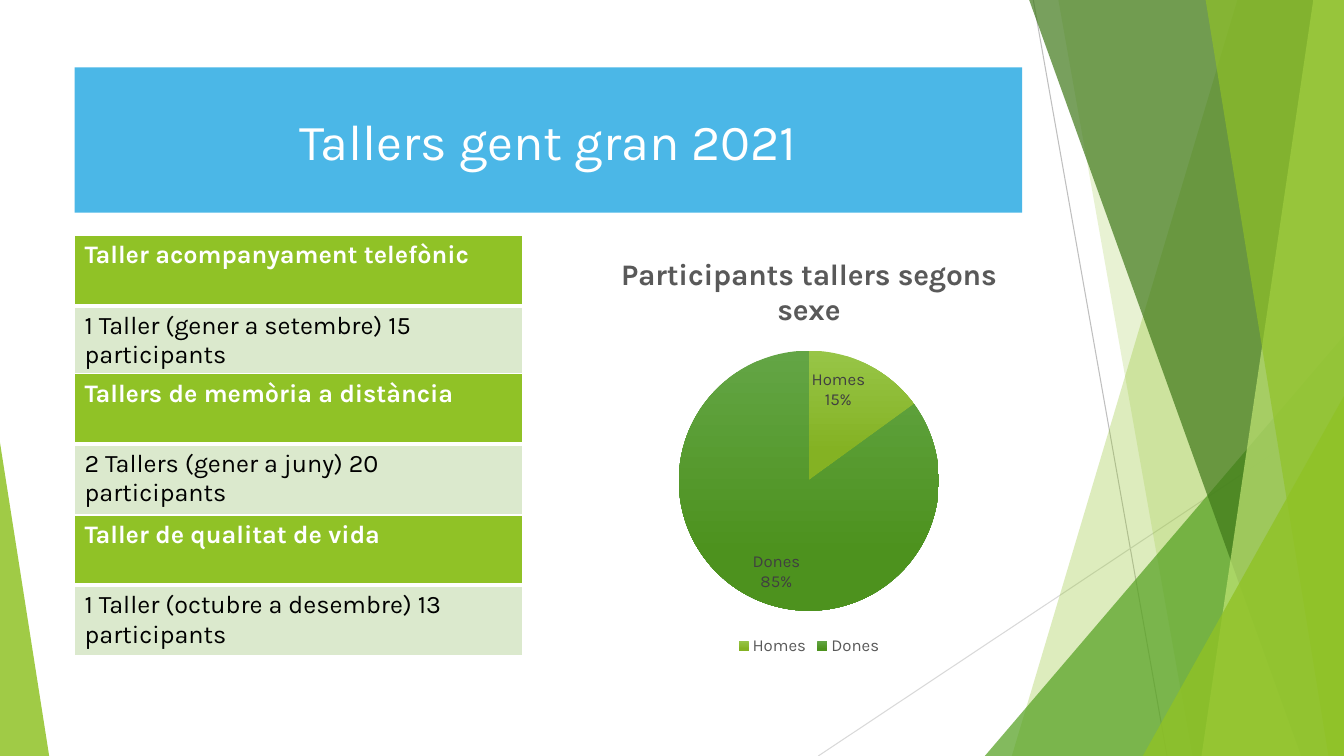
from dataclasses import dataclass

from lxml import etree
from pptx import Presentation
from pptx import util as u
from pptx.chart import data
from pptx.dml.color import RGBColor
from pptx.enum import chart as charts
from pptx.enum import shapes, text
from pptx.oxml.ns import qn

WHITE = RGBColor(0xFF, 0xFF, 0xFF)
BLACK = RGBColor(0x00, 0x00, 0x00)
SKY = RGBColor(0x4B, 0xB7, 0xE7)
LIME = RGBColor(0x90, 0xC2, 0x26)
PALE_LIME = RGBColor(0xC0, 0xE4, 0x74)
LEAF = RGBColor(0x54, 0xA0, 0x21)
FOREST = RGBColor(0x3F, 0x78, 0x19)
MIST = RGBColor(0xDB, 0xE9, 0xCD)
SILVER = RGBColor(0xBF, 0xBF, 0xBF)
LIGHT_SILVER = RGBColor(0xD9, 0xD9, 0xD9)
GREY = RGBColor(0x59, 0x59, 0x59)
DARK_GREY = RGBColor(0x40, 0x40, 0x40)
HOMES = (RGBColor(0x97, 0xC5, 0x47), RGBColor(0x84, 0xB2, 0x23))
DONES = (RGBColor(0x63, 0xA5, 0x45), RGBColor(0x4D, 0x92, 0x1E))
FONT = "Karla"
WIDTH, HEIGHT = 33.87, 19.05
LEFT = 1.88


@dataclass
class Ray:
    start: tuple[float, float]
    end: tuple[float, float]
    color: RGBColor


@dataclass
class Band:
    top_x: float
    bottom_x: float
    color: RGBColor
    opacity: int


@dataclass
class Wedge:
    left: float
    top: float
    width: float
    apex: float
    color: RGBColor
    opacity: int


@dataclass
class Workshop:
    top: float
    name: str
    summary: str


RAYS = [
    Ray((26.04, 0), (29.41, HEIGHT), SILVER),
    Ray((WIDTH, 10.24), (20.62, HEIGHT), LIGHT_SILVER),
]
FACETS = [
    Band(31.19, 25.5, LIME, 30),
    Band(26.67, 30.05, LIME, 20),
    Wedge(24.82, 8.46, 9.05, 1, LEAF, 72),
    Band(25.93, 32.79, FOREST, 70),
    Band(33.1, 30.28, PALE_LIME, 70),
    Band(30.38, 33.48, LIME, 65),
    Wedge(28.8, 9.98, 5.07, 1, LIME, 80),
    Wedge(0, 11.15, 1.24, 0, LIME, 85),
]
WORKSHOPS = [
    Workshop(5.94, "Taller acompanyament telefònic",
             "1 Taller (gener a setembre) 15 participants"),
    Workshop(9.42, "Tallers de memòria a distància",
             "2 Tallers (gener a juny) 20 participants"),
    Workshop(12.98, "Taller de qualitat de vida",
             "1 Taller (octubre a desembre) 13 participants"),
]


def style_font(font, size: float, color: RGBColor, bold: bool = False) -> None:
    font.name = FONT
    font.size = u.Pt(size)
    font.bold = bold
    font.color.rgb = color


def paint(shape, color: RGBColor, opacity: int = 100) -> None:
    shape.shadow.inherit = False
    shape.fill.solid()
    shape.fill.fore_color.rgb = color
    shape.line.fill.background()
    if opacity < 100:
        tint = next(shape.element.spPr.iter(qn("a:srgbClr")))
        etree.SubElement(tint, qn("a:alpha"), val=str(opacity * 1000))


def draw_ray(slide, ray: Ray) -> None:
    line = slide.shapes.add_connector(
        shapes.MSO_CONNECTOR.STRAIGHT, *map(u.Cm, ray.start + ray.end))
    line.line.color.rgb = ray.color
    line.line.width = u.Pt(0.75)
    etree.SubElement(line.element.spPr, qn("a:effectLst"))


def draw_band(slide, band: Band) -> None:
    builder = slide.shapes.build_freeform(
        u.Cm(band.top_x), u.Cm(-0.02))
    corners = [(WIDTH, -0.02), (WIDTH, HEIGHT), (band.bottom_x, HEIGHT)]
    builder.add_line_segments([(u.Cm(x), u.Cm(y)) for x, y in corners])
    paint(builder.convert_to_shape(), band.color, band.opacity)


def draw_wedge(slide, wedge: Wedge) -> None:
    triangle = slide.shapes.add_shape(
        shapes.MSO_SHAPE.ISOSCELES_TRIANGLE, u.Cm(wedge.left),
        u.Cm(wedge.top), u.Cm(wedge.width), u.Cm(HEIGHT - wedge.top))
    triangle.adjustments[0] = wedge.apex
    paint(triangle, wedge.color, wedge.opacity)


def draw_title(slide, words: str) -> None:
    banner = slide.shapes.add_shape(
        shapes.MSO_SHAPE.RECTANGLE, u.Cm(LEFT), u.Cm(1.7),
        u.Cm(23.88), u.Cm(3.66))
    paint(banner, SKY)
    frame = banner.text_frame
    frame.text = words
    frame.vertical_anchor = text.MSO_ANCHOR.MIDDLE
    paragraph = frame.paragraphs[0]
    paragraph.alignment = text.PP_ALIGN.CENTER
    style_font(paragraph.runs[0].font, 36, WHITE)


def add_borders(cell, bottom: float) -> None:
    properties = cell._tc.get_or_add_tcPr()
    widths = {"a:lnL": 1, "a:lnR": 1, "a:lnT": 1, "a:lnB": bottom}
    for index, (side, width) in enumerate(widths.items()):
        border = etree.Element(qn(side), w=str(u.Pt(width)))
        fill = etree.SubElement(border, qn("a:solidFill"))
        etree.SubElement(fill, qn("a:srgbClr"), val=str(WHITE))
        properties.insert(index, border)


def draw_workshop(slide, workshop: Workshop) -> None:
    table = slide.shapes.add_table(
        2, 1, u.Cm(LEFT), u.Cm(workshop.top), u.Cm(11.28), u.Cm(3.54)).table
    table.horz_banding = False
    rows = [(workshop.name, LIME, WHITE, True, 3),
            (workshop.summary, MIST, BLACK, False, 1)]
    for index, (words, fill, color, bold, bottom) in enumerate(rows):
        cell = table.cell(index, 0)
        cell.text_frame.text = words
        style_font(cell.text_frame.paragraphs[0].runs[0].font, 18, color, bold)
        cell.fill.solid()
        cell.fill.fore_color.rgb = fill
        add_borders(cell, bottom)


def draw_pie(slide, name: str) -> None:
    participants = data.CategoryChartData()
    participants.categories = ["Homes", "Dones"]
    participants.add_series(name, (15, 85))
    chart = slide.shapes.add_chart(
        charts.XL_CHART_TYPE.PIE, u.Cm(13.82), u.Cm(5.94),
        u.Cm(13.13), u.Cm(10.69), participants).chart
    style_font(chart.font, 10, BLACK)
    chart.has_title = True
    chart.chart_title.text_frame.text = name
    heading = chart.chart_title.text_frame.paragraphs[0]
    style_font(heading.runs[0].font, 21.3, GREY, True)
    chart.has_legend = True
    chart.legend.position = charts.XL_LEGEND_POSITION.BOTTOM
    chart.legend.include_in_layout = False
    style_font(chart.legend.font, 12, GREY)
    plot = chart.plots[0]
    plot.vary_by_categories = True
    series = plot.series[0]
    for index, colors in enumerate((HOMES, DONES)):
        fill = series.points[index].format.fill
        fill.gradient()
        fill.gradient_angle = 270
        for stop, color, position in zip(fill.gradient_stops, colors, (0, 0.78)):
            stop.color.rgb = color
            stop.position = position
    labels = series.data_labels
    labels.show_value = False
    labels.show_percentage = True
    labels.show_category_name = True
    labels.number_format = "0%"
    labels.number_format_is_linked = False
    labels.position = charts.XL_LABEL_POSITION.INSIDE_END
    style_font(labels.font, 12, DARK_GREY)


def main() -> None:
    presentation = Presentation()
    presentation.slide_width = u.Cm(WIDTH)
    presentation.slide_height = u.Cm(HEIGHT)
    slide = presentation.slides.add_slide(presentation.slide_layouts[6])
    for ray in RAYS:
        draw_ray(slide, ray)
    for facet in FACETS:
        draw = draw_band if isinstance(facet, Band) else draw_wedge
        draw(slide, facet)
    draw_title(slide, "Tallers gent gran 2021")
    for workshop in WORKSHOPS:
        draw_workshop(slide, workshop)
    draw_pie(slide, "Participants tallers segons sexe")
    presentation.save("out.pptx")


if __name__ == "__main__":
    main()
